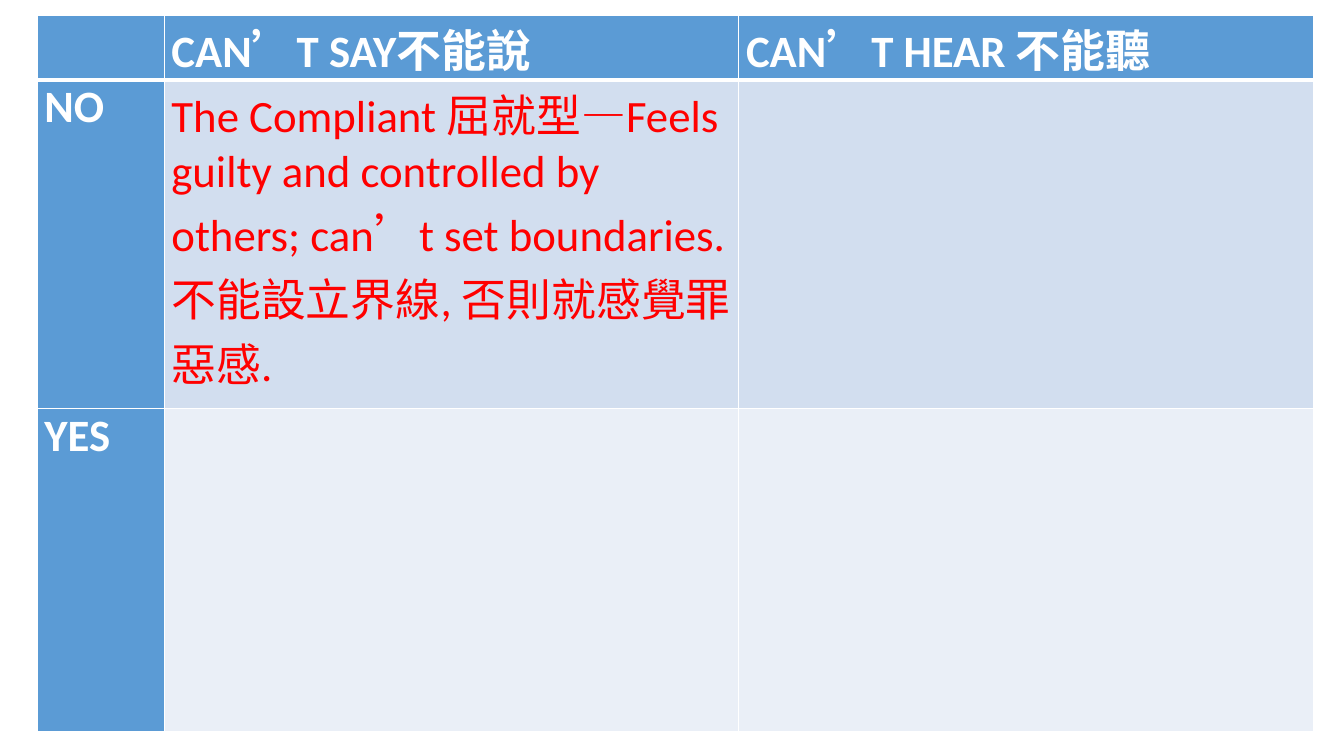
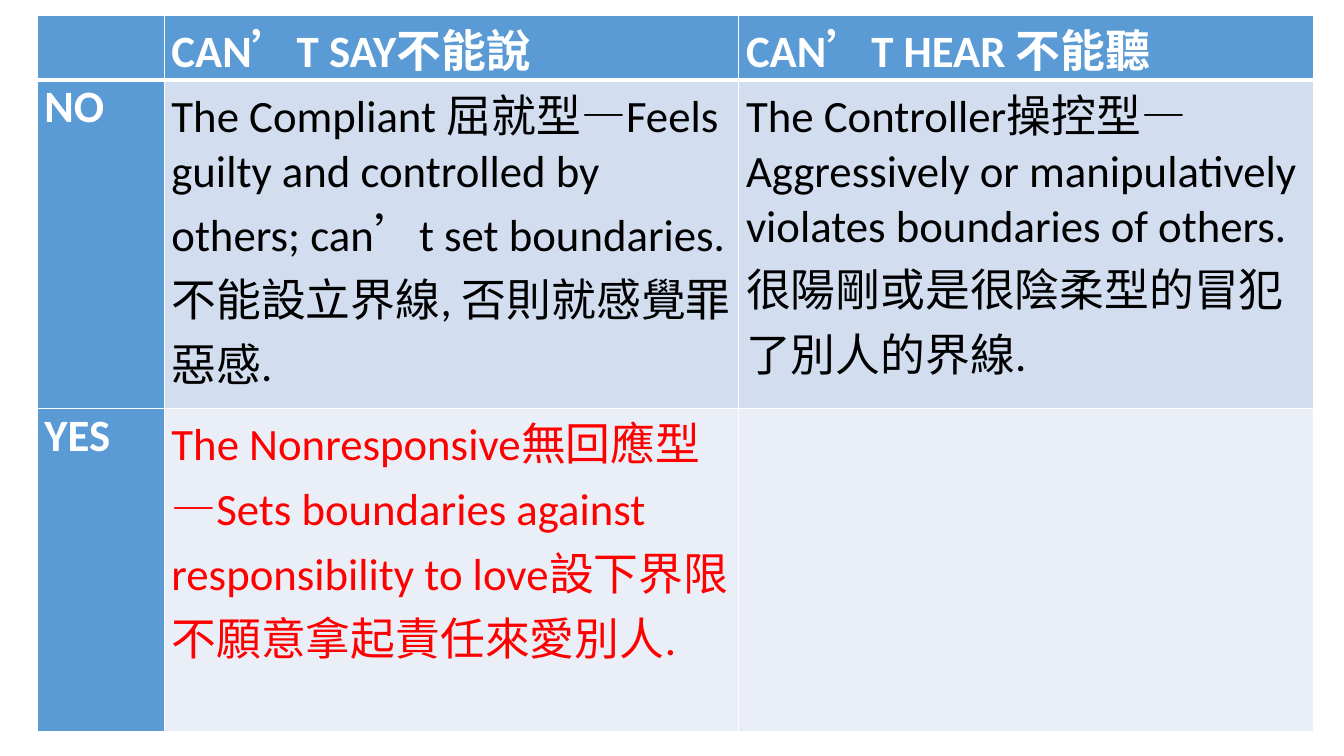
from lxml.etree import SubElement
from pptx import Presentation
from pptx.dml.color import RGBColor
from pptx.oxml.ns import qn
from pptx.util import Cm, Pt

FONT = "Calibri"
TEXT_SIZE = 32
WHITE, BLACK, RED = "FFFFFF", "000000", "FF0000"
HEADING_FILL = "5B9BD5"
ROW_FILLS = ["D2DEEF", "EAEFF7"]

# Table geometry in centimetres
TABLE_LEFT, TABLE_TOP = 0.94, 0.38
COLUMN_WIDTHS = [3.2, 14.48, 14.48]
ROW_HEIGHTS = [1.35, 8.28, 8.13]
SIDE_MARGIN = 0.18

COLUMN_HEADINGS = ["", "CAN’T SAY不能說", "CAN’T HEAR 不能聽"]
ROW_HEADINGS = ["NO", "YES"]
COMPLIANT = ("The Compliant 屈就型—Feels guilty and controlled by others; "
             "can’t set boundaries. 不能設立界線, 否則就感覺罪惡感.")
CONTROLLER = ("The Controller操控型—Aggressively or manipulatively violates "
              "boundaries of others. 很陽剛或是很陰柔型的冒犯了別人的界線.")
NONRESPONSIVE = ("The Nonresponsive無回應型—Sets boundaries against "
                 "responsibility to love設下界限不願意拿起責任來愛別人.")
EMPTY = ("", BLACK)

# Each slide: rows of (text, colour); red marks the newest type
SLIDES = [
    [[(COMPLIANT, RED), EMPTY],
     [EMPTY, EMPTY]],
    [[(COMPLIANT, BLACK), (CONTROLLER, BLACK)],
     [(NONRESPONSIVE, RED), EMPTY]],
]


def color(value):
    return RGBColor.from_string(value)


def set_borders(cell, widths):
    """Draw white borders; widths maps each side to points."""
    properties = cell._tc.get_or_add_tcPr()
    for side, width in widths.items():
        line = SubElement(properties, qn(f"a:ln{side}"), w=str(Pt(width)))
        fill = SubElement(line, qn("a:solidFill"))
        SubElement(fill, qn("a:srgbClr"), val=WHITE)


def fill_cell(cell, text, fill, text_color=WHITE, bold=True, top=1, bottom=1):
    set_borders(cell, {"L": 1, "R": 1, "T": top, "B": bottom})
    cell.fill.solid()
    cell.fill.fore_color.rgb = color(fill)
    cell.margin_left = cell.margin_right = Cm(SIDE_MARGIN)
    cell.margin_top = cell.margin_bottom = 0
    para = cell.text_frame.paragraphs[0]
    if text:
        para.add_run().text = text
    para.font.name = FONT
    para.font.size = Pt(TEXT_SIZE)
    para.font.bold = bold
    para.font.color.rgb = color(text_color)


def add_boundary_table(page, left, top, body):
    frame = page.shapes.add_table(
        len(ROW_HEIGHTS), len(COLUMN_WIDTHS), Cm(left), Cm(top),
        Cm(sum(COLUMN_WIDTHS)), Cm(sum(ROW_HEIGHTS)))
    table = frame.table
    table.first_row = table.horz_banding = False
    for column, width in zip(table.columns, COLUMN_WIDTHS):
        column.width = Cm(width)
    for row, height in zip(table.rows, ROW_HEIGHTS):
        row.height = Cm(height)

    # Column headings, over a heavier rule
    for index, heading in enumerate(COLUMN_HEADINGS):
        fill_cell(table.cell(0, index), heading, HEADING_FILL, bottom=3)

    # Row headings and personality types
    for index, entries in enumerate(body):
        row = index + 1
        top_rule = 3 if row == 1 else 1
        fill_cell(table.cell(row, 0), ROW_HEADINGS[index], HEADING_FILL,
                  top=top_rule)
        for column, (text, text_color) in enumerate(entries, start=1):
            fill_cell(table.cell(row, column), text, ROW_FILLS[index],
                      text_color, bold=False, top=top_rule)


def main():
    deck = Presentation()
    deck.slide_width, deck.slide_height = Cm(33.87), Cm(19.05)
    for body in SLIDES:
        page = deck.slides.add_slide(deck.slide_layouts[6])
        add_boundary_table(page, TABLE_LEFT, TABLE_TOP, body)
    deck.save("out.pptx")


if __name__ == "__main__":
    main()
